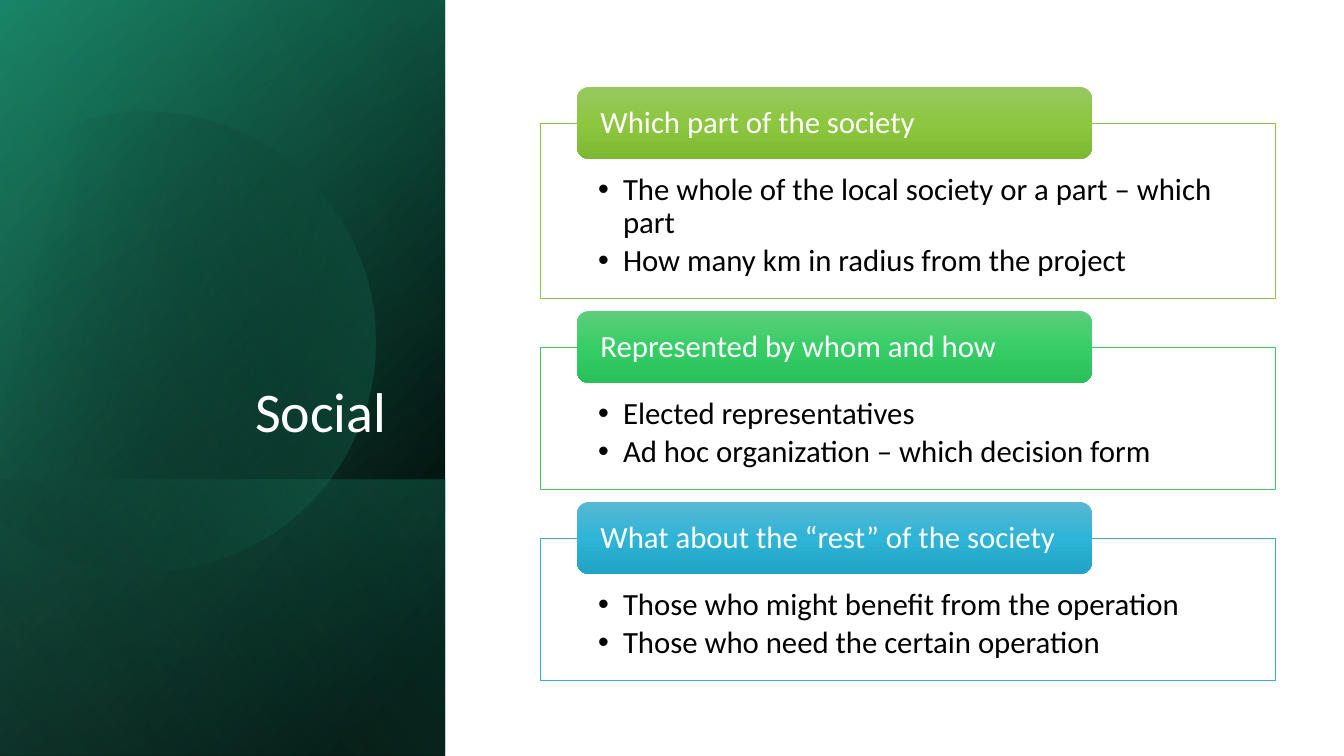
"""Build the "Social" slide: a dark gradient side band and three titled bullet panels."""
from dataclasses import dataclass
from itertools import pairwise
from math import cos, radians, sin

from lxml.etree import SubElement
from pptx import Presentation
from pptx.dml.color import RGBColor
from pptx.enum.shapes import MSO_SHAPE
from pptx.enum.text import MSO_ANCHOR, PP_ALIGN
from pptx.oxml.ns import qn
from pptx.shapes.autoshape import Shape
from pptx.shapes.shapetree import SlideShapes
from pptx.text.text import TextFrame
from pptx.util import Emu, Pt

EMU_PER_PX = 914400 / 100.8


@dataclass(frozen=True)
class Theme:
    font: str = "Calibri"
    white: str = "FFFFFF"
    black: str = "000000"
    forest: str = "16745A"
    emerald: str = "1D9A78"
    mint: str = "5AE0BB"
    title_size: float = 40
    text_size: float = 22
    line_spacing: float = 0.9
    bullet_gap: float = 3.5
    outline: float = 0.5


@dataclass(frozen=True)
class Stop:
    position: int
    color: str
    opacity: int = 100


@dataclass(frozen=True)
class BandLayer:
    top: int
    height: int
    stops: tuple[Stop, ...]
    angle: int


@dataclass(frozen=True)
class Panel:
    heading: str
    bullets: tuple[str, ...]
    height: int
    outline: str
    shades: tuple[str, str, str]


THEME = Theme()
SLIDE_WIDTH, SLIDE_HEIGHT = 1344, 756
BAND_WIDTH = 445
PANEL_LEFT, PANEL_TOP, PANEL_WIDTH, PANEL_GAP = 540, 123, 735, 49
HEADING_LEFT, HEADING_WIDTH, HEADING_HEIGHT = 577, 515, 72
DISC_X, DISC_Y, DISC_RADIUS = 145, 337, 230
DISC_ANGLES = (-118, -90, 0, 90, 150)

BASE_LAYERS = (
    BandLayer(0, 756, (Stop(8, THEME.black), Stop(100, THEME.forest)), 50),
    BandLayer(0, 756, (Stop(0, THEME.black, 0), Stop(99, THEME.emerald, 46)), 30),
    BandLayer(480, 276, (Stop(2, THEME.emerald, 29), Stop(100, THEME.black, 30)), 130),
)
SHEEN = BandLayer(0, 756, (Stop(0, THEME.black, 0), Stop(99, THEME.mint, 11)), 120)
DISC_STOPS = (Stop(29, THEME.black, 0), Stop(100, THEME.emerald, 43))

PANELS = (
    Panel("Which part of the society",
          ("The whole of the local society or a part – which part",
           "How many km in radius from the project"),
          175, "8BC145", ("98C862", "8CC73F", "7DB831")),
    Panel("Represented by whom and how",
          ("Elected representatives", "Ad hoc organization – which decision form"),
          142, "3EC76A", ("5DCE7C", "37CE67", "29BF59")),
    Panel("What about the “rest” of the society",
          ("Those who might benefit from the operation",
           "Those who need the certain operation"),
          142, "36AFCE", ("59B8D4", "2EB4D6", "21A4C6")),
)


def px(length: float) -> Emu:
    return Emu(round(length * EMU_PER_PX))


def fill_gradient(shape: Shape, stops: tuple[Stop, ...], angle: int) -> None:
    shape.shadow.inherit = False
    shape.line.fill.background()
    shape.fill.background()
    properties = shape._element.spPr
    gradient = SubElement(properties, qn("a:gradFill"), rotWithShape="1")
    stop_list = SubElement(gradient, qn("a:gsLst"))
    for stop in stops:
        entry = SubElement(stop_list, qn("a:gs"), pos=str(stop.position * 1000))
        color = SubElement(entry, qn("a:srgbClr"), val=stop.color)
        if stop.opacity < 100:
            SubElement(color, qn("a:alpha"), val=str(stop.opacity * 1000))
    SubElement(gradient, qn("a:lin"), ang=str(angle * 60000), scaled="0")
    properties.replace(properties.find(qn("a:noFill")), gradient)


def set_frame(frame: TextFrame, anchor: MSO_ANCHOR, insets: tuple[int, int, int, int]) -> None:
    frame.word_wrap = True
    frame.vertical_anchor = anchor
    (frame.margin_left, frame.margin_top,
     frame.margin_right, frame.margin_bottom) = map(px, insets)


def add_text(frame: TextFrame, lines: tuple[str, ...], size: float, color: str,
             align: PP_ALIGN = PP_ALIGN.LEFT, bulleted: bool = False) -> None:
    for index, line in enumerate(lines):
        paragraph = frame.add_paragraph() if index else frame.paragraphs[0]
        paragraph.alignment = align
        paragraph.line_spacing = THEME.line_spacing
        if bulleted:
            paragraph.space_after = Pt(THEME.bullet_gap)
            properties = paragraph._p.get_or_add_pPr()
            properties.set("marL", str(px(25)))
            properties.set("indent", str(px(-25)))
            SubElement(properties, qn("a:buFont"), typeface="Arial")
            SubElement(properties, qn("a:buChar"), char="•")
        run = paragraph.add_run()
        run.text = line
        run.font.name = THEME.font
        run.font.size = Pt(size)
        run.font.color.rgb = RGBColor.from_string(color)


def add_band_layer(shapes: SlideShapes, layer: BandLayer) -> None:
    left = (BAND_WIDTH - layer.height) / 2
    top = layer.top + (layer.height - BAND_WIDTH) / 2
    band = shapes.add_shape(MSO_SHAPE.RECTANGLE, px(left), px(top),
                            px(layer.height), px(BAND_WIDTH))
    band.rotation = 90
    band._element.spPr.find(qn("a:xfrm")).set("flipH", "1")
    fill_gradient(band, layer.stops, layer.angle)


def add_disc(shapes: SlideShapes) -> None:
    rim = [(DISC_X + DISC_RADIUS * cos(radians(angle)), DISC_Y + DISC_RADIUS * sin(radians(angle)))
           for angle in DISC_ANGLES]
    builder = shapes.build_freeform(*rim[0], scale=EMU_PER_PX)
    builder.add_line_segments(rim[1:], close=True)
    disc = builder.convert_to_shape()
    chords = list(disc._element.iter(qn("a:lnTo")))
    for chord, (start, end) in zip(chords, pairwise(DISC_ANGLES)):
        outline = chord.getparent()
        arc = SubElement(outline, qn("a:arcTo"), wR=str(DISC_RADIUS), hR=str(DISC_RADIUS),
                         stAng=str(start % 360 * 60000), swAng=str((end - start) * 60000))
        outline.replace(chord, arc)
    disc.rotation = 343.9
    fill_gradient(disc, DISC_STOPS, 30)


def add_title(shapes: SlideShapes) -> None:
    title = shapes.add_textbox(px(65), px(186), px(344), px(264))
    set_frame(title.text_frame, MSO_ANCHOR.BOTTOM, (10, 5, 10, 5))
    add_text(title.text_frame, ("Social ",), THEME.title_size, THEME.white, PP_ALIGN.RIGHT)


def add_panel(shapes: SlideShapes, panel: Panel, top: int) -> None:
    body = shapes.add_shape(MSO_SHAPE.RECTANGLE, px(PANEL_LEFT), px(top),
                            px(PANEL_WIDTH), px(panel.height))
    body.shadow.inherit = False
    body.fill.solid()
    body.fill.fore_color.rgb = RGBColor.from_string(THEME.white)
    body.line.color.rgb = RGBColor.from_string(panel.outline)
    body.line.width = Pt(THEME.outline)
    set_frame(body.text_frame, MSO_ANCHOR.TOP, (58, 51, 57, 17))
    add_text(body.text_frame, panel.bullets, THEME.text_size, THEME.black, bulleted=True)

    heading = shapes.add_shape(MSO_SHAPE.ROUNDED_RECTANGLE, px(HEADING_LEFT),
                               px(top - HEADING_HEIGHT / 2), px(HEADING_WIDTH), px(HEADING_HEIGHT))
    fill_gradient(heading, tuple(map(Stop, (0, 50, 100), panel.shades)), 90)
    set_frame(heading.text_frame, MSO_ANCHOR.MIDDLE, (20, 1, 19, 0))
    add_text(heading.text_frame, (panel.heading,), THEME.text_size, THEME.white)


def main() -> None:
    presentation = Presentation()
    presentation.slide_width, presentation.slide_height = px(SLIDE_WIDTH), px(SLIDE_HEIGHT)
    shapes = presentation.slides.add_slide(presentation.slide_layouts[6]).shapes
    for layer in BASE_LAYERS:
        add_band_layer(shapes, layer)
    add_disc(shapes)
    add_band_layer(shapes, SHEEN)
    add_title(shapes)
    top = PANEL_TOP
    for panel in PANELS:
        add_panel(shapes, panel, top)
        top += panel.height + PANEL_GAP
    presentation.save("out.pptx")


if __name__ == "__main__":
    main()
